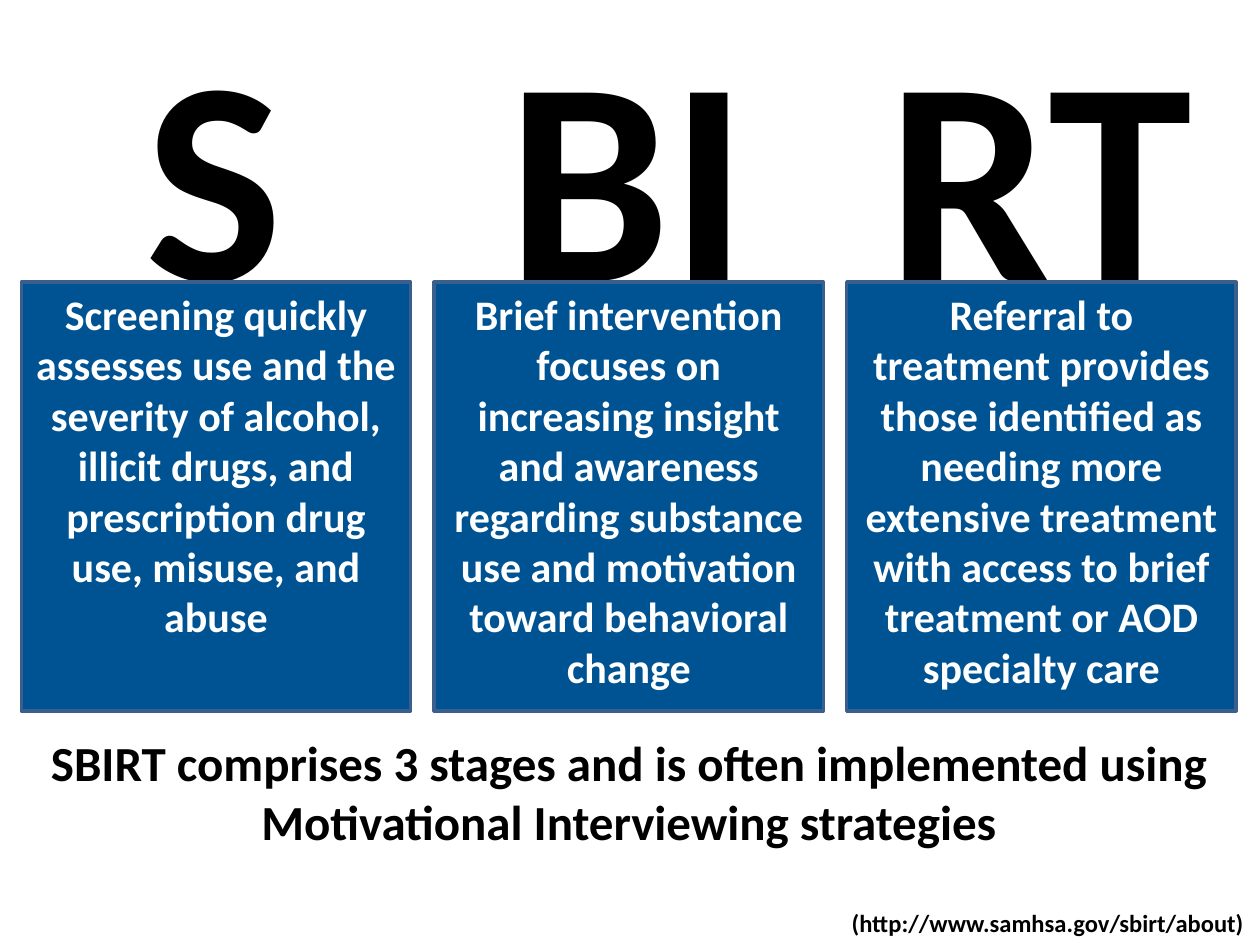
import pptx
import pptx.dml.color
import pptx.enum.shapes
import pptx.enum.text
import pptx.util
from pptx.util import Cm


class Theme:
    font = "Calibri"
    black = "000000"
    white = "FFFFFF"
    box_fill = "005392"
    box_line = "3A5F8C"
    letter_size = 166
    title_size = 28
    body_size = 24
    source_size = 14


CENTER = pptx.enum.text.PP_ALIGN.CENTER
LEFT = pptx.enum.text.PP_ALIGN.LEFT
TOP = pptx.enum.text.MSO_ANCHOR.TOP
MIDDLE = pptx.enum.text.MSO_ANCHOR.MIDDLE


def color(value):
    return pptx.dml.color.RGBColor.from_string(value)


def write(shape, text, size, ink=Theme.black, align=LEFT, anchor=TOP, wrap=True):
    frame = shape.text_frame
    frame.word_wrap = wrap
    frame.vertical_anchor = anchor
    paragraph = frame.paragraphs[0]
    paragraph.alignment = align
    run = paragraph.add_run()
    run.text = text
    run.font.name = Theme.font
    run.font.size = pptx.util.Pt(size)
    run.font.bold = True
    run.font.color.rgb = color(ink)


presentation = pptx.Presentation()
presentation.slide_width = Cm(25.4)
presentation.slide_height = Cm(19.05)
slide = presentation.slides.add_slide(presentation.slide_layouts[5])

# Three stages: letters, their left edge and width in cm, description
stages = [
    ("S", 2.69, 3.3,
     "Screening quickly assesses use and the severity of alcohol, illicit drugs, "
     "and prescription drug use, misuse, and abuse"),
    ("BI", 9.98, 5.41,
     "Brief intervention focuses on increasing insight and awareness regarding "
     "substance use and motivation toward behavioral change"),
    ("RT", 17.65, 6.71,
     "Referral to treatment provides those identified as needing more extensive "
     "treatment with access to brief treatment or AOD specialty care"),
]
margin, box_width, box_pitch = 0.43, 7.85, 8.32

for index, (letters, left, width, description) in enumerate(stages):
    # Large letters, partly covered by the box
    heading = slide.shapes.add_textbox(Cm(left), Cm(-0.3), Cm(width), Cm(7.34))
    write(heading, letters, size=Theme.letter_size, wrap=False)

    # Description box
    box = slide.shapes.add_shape(
        pptx.enum.shapes.MSO_SHAPE.RECTANGLE,
        Cm(margin + index * box_pitch), Cm(5.69), Cm(box_width), Cm(8.64))
    box.shadow.inherit = False
    box.fill.solid()
    box.fill.fore_color.rgb = color(Theme.box_fill)
    box.line.color.rgb = color(Theme.box_line)
    box.line.width = pptx.util.Pt(2)
    write(box, description, size=Theme.body_size, ink=Theme.white, align=CENTER)

# Title below the boxes
title = slide.shapes.title
title.left, title.top = Cm(margin), Cm(14.6)
title.width, title.height = Cm(2 * box_pitch + box_width), Cm(2.7)
write(title, "SBIRT comprises 3 stages and is often implemented using "
      "Motivational Interviewing strategies",
      size=Theme.title_size, align=CENTER, anchor=MIDDLE)

# Source address
source = slide.shapes.add_textbox(Cm(16.92), Cm(18.19), Cm(8.48), Cm(0.86))
write(source, "(http://www.samhsa.gov/sbirt/about)", size=Theme.source_size, wrap=False)

presentation.save("out.pptx")
